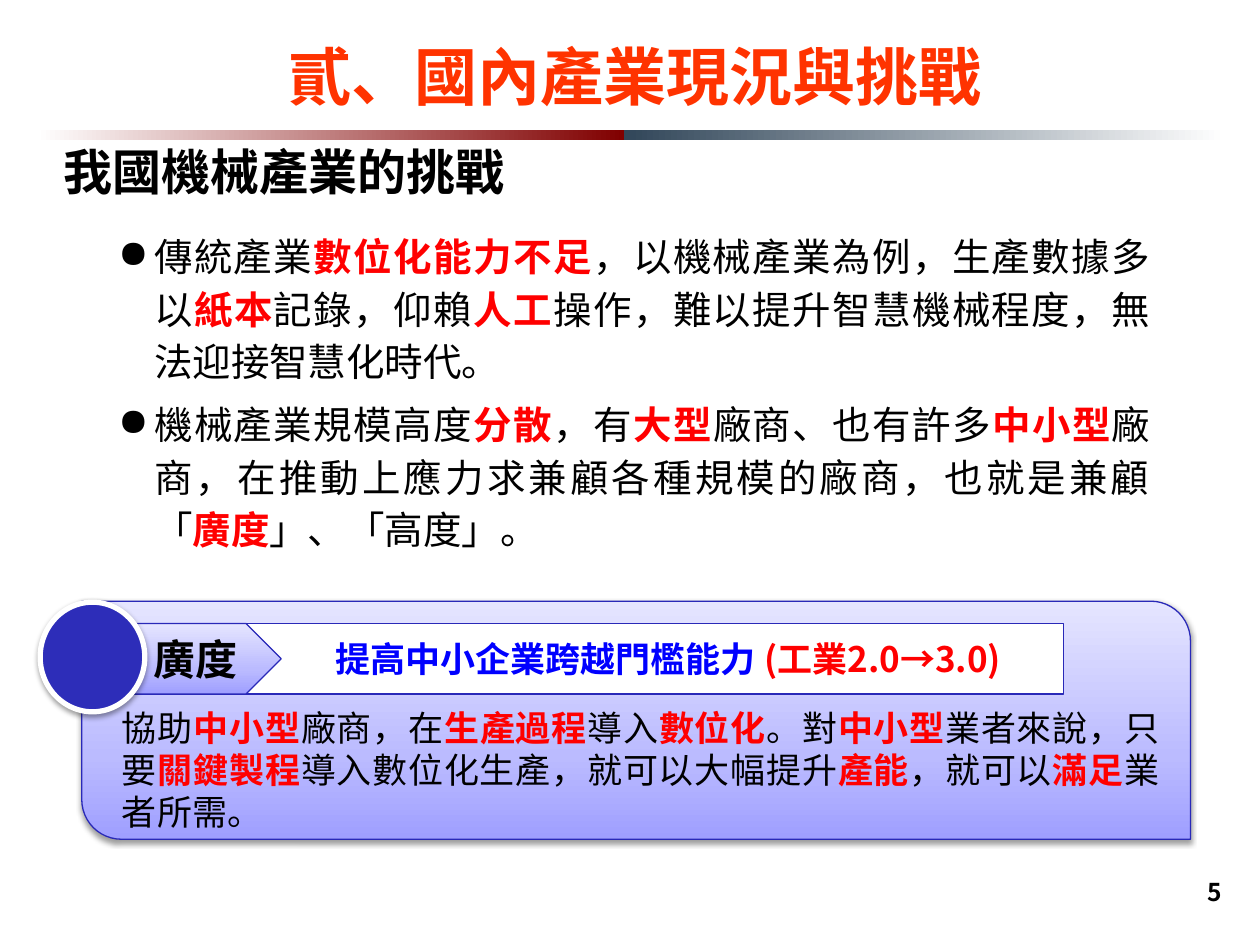
"""Build a slide on the challenges of the domestic machinery industry."""
from lxml import etree
from pptx import Presentation
from pptx.dml.color import RGBColor
from pptx.enum.shapes import MSO_SHAPE as Shape
from pptx.enum.text import MSO_ANCHOR as Anchor, PP_ALIGN as Align
from pptx.oxml.ns import qn
from pptx.util import Cm, Pt

FONT = "Noto Sans CJK SC"
BLACK, RED, WHITE, EDGE = "000000", "FF0000", "FFFFFF", "2929B8"
LILAC = [(0, "9F9FFF"), (35, "BBBBFF"), (100, "E5E5FF")]
rgb = RGBColor.from_string


def write(para, text, size, color=BLACK, bold=False, align=Align.LEFT):
    """Fill a paragraph; parts between asterisks are bold red."""
    para.alignment = align
    para.font.size, para.font.name = Pt(size), FONT
    etree.SubElement(para.font._element, qn("a:ea"), typeface=FONT)
    for index, part in enumerate(text.split("*")):
        if part:
            span = para.add_run()
            span.text = part
            span.font.bold = bold or index % 2 == 1
            span.font.color.rgb = rgb(RED if index % 2 else color)


def add_panel(kind, place, fill, angle=0, line=None, width=0.75, shadow=False):
    """Add a shape with a solid or gradient fill."""
    panel = page.shapes.add_shape(kind, *map(Cm, place))
    panel.shadow.inherit = False
    if isinstance(fill, str):
        panel.fill.solid()
        panel.fill.fore_color.rgb = rgb(fill)
    else:
        panel.fill.gradient()
        panel.fill.gradient_angle = angle
        stops = panel._element.spPr.find(".//" + qn("a:gsLst"))
        for stop in list(stops):
            stops.remove(stop)
        for position, color in fill:
            stop = etree.SubElement(stops, qn("a:gs"), pos=str(position * 1000))
            etree.SubElement(stop, qn("a:srgbClr"), val=color)
    if line:
        panel.line.color.rgb = rgb(line)
        panel.line.width = Pt(width)
    else:
        panel.line.fill.background()
    if shadow:
        effects = panel._element.spPr.find(qn("a:effectLst"))
        outer = etree.SubElement(effects, qn("a:outerShdw"), blurRad=str(Pt(3.1)),
                                 dist=str(Pt(1.6)), dir="5400000", rotWithShape="0")
        tint = etree.SubElement(outer, qn("a:srgbClr"), val=BLACK)
        etree.SubElement(tint, qn("a:alpha"), val="38000")
    panel.text_frame.vertical_anchor = Anchor.MIDDLE
    return panel


deck = Presentation()
deck.slide_width, deck.slide_height = Cm(25.4), Cm(19.05)
page = deck.slides.add_slide(deck.slide_layouts[6])

add_panel(Shape.RECTANGLE, (0.74, 2.62, 11.84, 0.2), [(0, WHITE), (100, "800000")])
add_panel(Shape.RECTANGLE, (12.58, 2.62, 12.14, 0.2), [(0, "314659"), (100, WHITE)])

panel = add_panel(Shape.ROUND_2_DIAG_RECTANGLE, (1.65, 12.12, 22.35, 4.8), LILAC, 90,
                  EDGE, shadow=True)
panel._element.spPr.find(qn("a:xfrm")).set("flipH", "1")

banner = add_panel(Shape.RECTANGLE, (2.01, 12.57, 19.43, 1.42), WHITE, line=EDGE)
para = banner.text_frame.paragraphs[0]
write(para, "提高中小企業跨越門檻能力 *(工業2.0→3.0)*", 20, "0000FF", True)
para._p.get_or_add_pPr().set("marL", str(Cm(4.5)))

label = add_panel(Shape.PENTAGON, (2.01, 12.57, 3.66, 1.42), LILAC, 90, EDGE)
label.text_frame.margin_left = Cm(0.81)
write(label.text_frame.paragraphs[0], "廣度", 24, BLACK, True, Align.CENTER)

add_panel(Shape.OVAL, (0.81, 12.14, 2.11, 2.21), "2D2DB9", line=WHITE, width=3, shadow=True)

texts = [
    ((0.1, 0.13, 25.4, 2.79), "貳、國內產業現況與挑戰", 36, "FF3300", True, Align.CENTER,
     Anchor.MIDDLE, True),
    ((1.04, 2.72, 9.5, 1.45), "我國機械產業的挑戰", 28, BLACK, True, Align.LEFT,
     Anchor.TOP, False),
    ((2.21, 14.12, 21.41, 2.82),
     "協助*中小型*廠商，在*生產過程*導入*數位化*。對*中小型*業者來說，只要*關鍵製程*"
     "導入數位化生產，就可以大幅提升*產能*，就可以*滿足*業者所需。",
     20, BLACK, False, Align.JUSTIFY, Anchor.TOP, True),
    ((19.61, 17.35, 5.28, 1.27), "5", 14, BLACK, True, Align.RIGHT, Anchor.MIDDLE, False),
]
for place, text, size, color, bold, align, anchor, wrap in texts:
    box = page.shapes.add_textbox(*map(Cm, place))
    box.text_frame.word_wrap = wrap
    box.text_frame.vertical_anchor = anchor
    write(box.text_frame.paragraphs[0], text, size, color, bold, align)

points = [
    "傳統產業*數位化能力不足*，以機械產業為例，生產數據多以*紙本*記錄，仰賴*人工*操作，"
    "難以提升智慧機械程度，無法迎接智慧化時代。",
    "機械產業規模高度*分散*，有*大型*廠商、也有許多*中小型*廠商，在推動上應力求兼顧"
    "各種規模的廠商，也就是兼顧「*廣度*」、「高度」。",
]
box = page.shapes.add_textbox(Cm(2.13), Cm(4.45), Cm(21.31), Cm(6.88))
box.text_frame.word_wrap = True
for index, point in enumerate(points):
    para = box.text_frame.add_paragraph() if index else box.text_frame.paragraphs[0]
    props = para._p.get_or_add_pPr()
    props.set("marL", str(Cm(0.73)))
    props.set("indent", str(Cm(-0.73)))
    etree.SubElement(props, qn("a:buChar"), char="●")
    para.line_spacing = Pt(30)
    if index:
        para.space_before = Pt(6)
    write(para, point, 22, align=Align.JUSTIFY)

deck.save("out.pptx")
